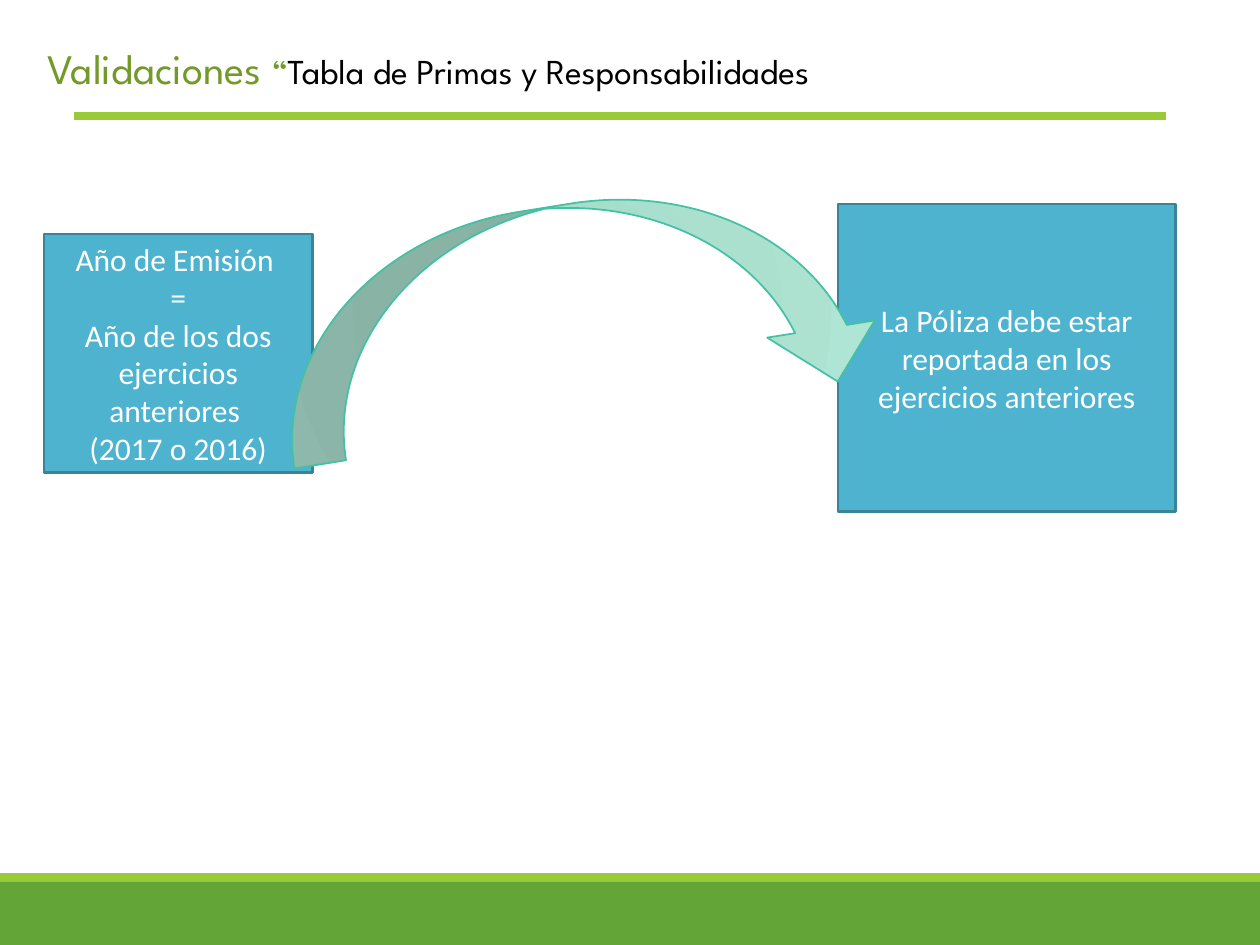
from lxml import etree
from pptx import Presentation, util as u
from pptx.dml import color
from pptx.enum import shapes, text
from pptx.oxml import ns

COLUMNS, ROWS = 100, 75
CELL = u.Inches(0.1)
LIME, WHITE = "99CB38", "FFFFFF"


def rgb(value):
    return color.RGBColor.from_string(value)


def grid(*cells):
    return [round(cell * CELL) for cell in cells]


def set_values(target, values):
    for name, value in values.items():
        setattr(target, name, value)


def set_line(line, hex_color, points):
    line.color.rgb = rgb(hex_color)
    line.width = u.Pt(points)


def add_run(paragraph, words, size, font, hex_color):
    run = paragraph.add_run()
    run.text = words
    set_values(run.font, {"size": u.Pt(size), "name": font})
    run.font.color.rgb = rgb(hex_color)


def add_block(slide, kind, box, fill):
    shape = slide.shapes.add_shape(kind, *grid(*box))
    shape.shadow.inherit = False
    shape.fill.solid()
    shape.fill.fore_color.rgb = rgb(fill)
    shape.line.fill.background()
    return shape


def add_footer(slide, box):
    left, top, width, height = box
    stripe = 0.7
    add_block(slide, shapes.MSO_SHAPE.RECTANGLE, box, "63A537")
    add_block(slide, shapes.MSO_SHAPE.RECTANGLE,
              (left, top - stripe, width, stripe), LIME)


def add_title(slide, box):
    left, top, width, height = box
    rule_y = top + 0.75 * height
    rule = slide.shapes.add_connector(
        shapes.MSO_CONNECTOR.STRAIGHT,
        *grid(left + 3.1, rule_y, left + width + 2.3, rule_y))
    set_line(rule.line, LIME, 4.5)
    etree.SubElement(rule._element.spPr, ns.qn("a:effectLst"))

    frame = slide.shapes.add_textbox(*grid(*box)).text_frame
    set_values(frame, {"word_wrap": True,
                       "auto_size": text.MSO_AUTO_SIZE.SHAPE_TO_FIT_TEXT})
    paragraph = frame.paragraphs[0]
    paragraph.alignment = text.PP_ALIGN.JUSTIFY
    for words, size, hex_color in (
            ("Validaciones ", 24, "739A28"),
            ("“", 20, "739A28"),
            ("Tabla de Primas y Responsabilidades", 20, "000000")):
        add_run(paragraph, words, size, "League Spartan", hex_color)


def add_process(slide, box, lines):
    shape = add_block(slide, shapes.MSO_SHAPE.FLOWCHART_PROCESS, box, "4EB3CF")
    set_line(shape.line, "3A8499", 1.25)
    frame = shape.text_frame
    set_values(frame, {"word_wrap": True,
                       "vertical_anchor": text.MSO_ANCHOR.MIDDLE})
    for index, words in enumerate(lines):
        paragraph = frame.add_paragraph() if index else frame.paragraphs[0]
        paragraph.alignment = text.PP_ALIGN.CENTER
        add_run(paragraph, words, 18, "Calibri", WHITE)


def set_radial_gradient(shape, stops):
    shape.fill.gradient()
    gradient = shape._element.spPr.find(ns.qn("a:gradFill"))
    for child in list(gradient):
        gradient.remove(child)
    stop_list = etree.SubElement(gradient, ns.qn("a:gsLst"))
    for percent, hex_color in stops:
        stop = etree.SubElement(stop_list, ns.qn("a:gs"), pos=str(percent * 1000))
        etree.SubElement(stop, ns.qn("a:srgbClr"), val=hex_color)
    circle = etree.SubElement(gradient, ns.qn("a:path"))
    circle.set("path", "circle")
    etree.SubElement(circle, ns.qn("a:fillToRect"),
                     dict.fromkeys("ltrb", "100000"))


def add_curved_arrow(slide, box):
    arrow = add_block(slide, shapes.MSO_SHAPE.CURVED_DOWN_ARROW, box, "ABE0CF")
    arrow.rotation = 350.9
    arrow.adjustments[0] = 0.24
    set_radial_gradient(arrow, ((0, "9AD9C5"), (45, "ABE0CF"), (100, "B1E7D6")))
    set_line(arrow.line, "44C1A3", 1)


def main():
    presentation = Presentation()
    set_values(presentation, {"slide_width": COLUMNS * CELL,
                              "slide_height": ROWS * CELL})
    slide = presentation.slides.add_slide(presentation.slide_layouts[6])
    add_footer(slide, (0, 70, COLUMNS, 5))
    add_title(slide, (2.8, 2.9, 87.4, 8.4))
    add_process(slide, (3.5, 18.6, 21.3, 18.9),
                ("Año de Emisión ", "=", "Año de los dos ejercicios anteriores ",
                 "(2017 o 2016)"))
    add_process(slide, (66.5, 16.2, 26.8, 24.4),
                ("La Póliza debe estar reportada en los ejercicios anteriores",))
    add_curved_arrow(slide, (21.7, 16.2, 48, 17.3))
    presentation.save("out.pptx")


if __name__ == "__main__":
    main()
